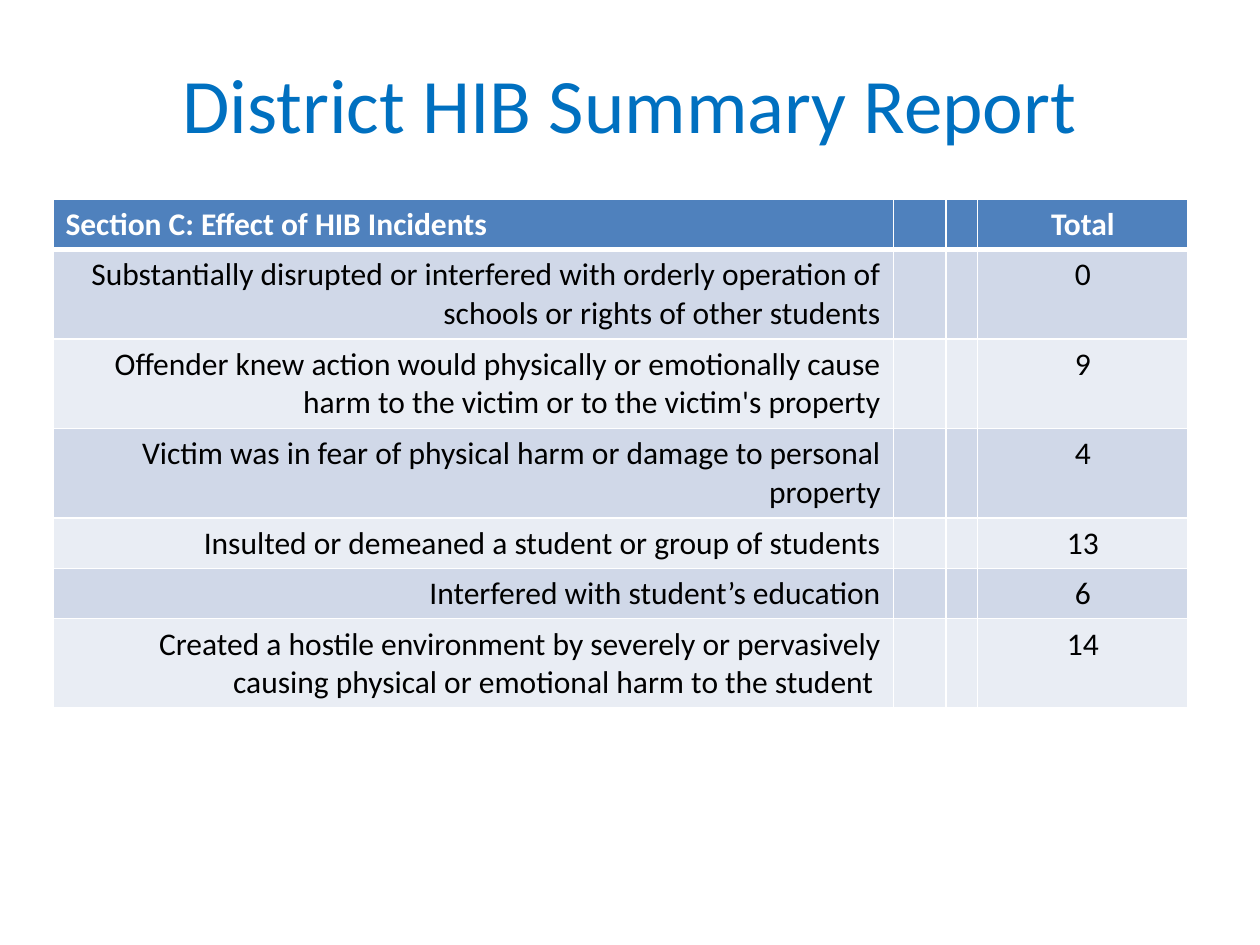
"""Build the District HIB Summary Report slide."""
from lxml import etree
from pptx import Presentation
from pptx.dml.color import RGBColor
from pptx.enum.text import MSO_ANCHOR, PP_ALIGN
from pptx.oxml.ns import qn
from pptx.util import Inches, Pt

LEFT, CENTER, RIGHT = PP_ALIGN.LEFT, PP_ALIGN.CENTER, PP_ALIGN.RIGHT
MIDDLE = MSO_ANCHOR.MIDDLE
HEADER_FILL, BAND_FILLS = "4F81BD", ("E9EDF4", "D0D8E8")


def write(frame, text, size, color, align, bold=False):
    frame.text = text
    paragraph = frame.paragraphs[0]
    paragraph.alignment = align
    for run in paragraph.runs:
        run.font.name = "Calibri"
        run.font.size = Pt(size)
        run.font.bold = bold
        run.font.color.rgb = RGBColor.from_string(color)


def set_borders(cell, color, widths):
    properties = cell._tc.get_or_add_tcPr()
    for position, (side, width) in enumerate(widths.items()):
        line = etree.Element(qn(f"a:ln{side}"), w=str(Pt(width)))
        fill = etree.SubElement(line, qn("a:solidFill"))
        etree.SubElement(fill, qn("a:srgbClr"), val=color)
        properties.insert(position, line)


prs = Presentation()
prs.slide_width, prs.slide_height = Inches(10), Inches(7.5)
slide = prs.slides.add_slide(prs.slide_layouts[6])

title = slide.shapes.add_textbox(Inches(0.5), Inches(0.3), Inches(9), Inches(1.03)).text_frame
title.word_wrap = True
title.vertical_anchor = MIDDLE
write(title, "District HIB Summary Report", 44, "0070C0", CENTER)

effects = [
    ("Section C: Effect of HIB Incidents", "Total", 0.4),
    ("Substantially disrupted or interfered with orderly operation of schools or rights of other students", "0", 0.71),
    ("Offender knew action would physically or emotionally cause harm to the victim or to the victim's property", "9", 0.71),
    ("Victim was in fear of physical harm or damage to personal property", "4", 0.71),
    ("Insulted or demeaned a student or group of students", "13", 0.4),
    ("Interfered with student’s education", "6", 0.4),
    ("Created a hostile environment by severely or pervasively causing physical or emotional harm to the student ", "14", 0.71),
]
column_widths = [6.67, 0.42, 0.25, 1.67]
table = slide.shapes.add_table(
    len(effects), len(column_widths), Inches(0.42), Inches(1.58),
    Inches(sum(column_widths)), Inches(sum(height for _, _, height in effects)),
).table
for column, width in zip(table.columns, column_widths):
    column.width = Inches(width)

for row, (effect, total, height) in enumerate(effects):
    table.rows[row].height = Inches(height)
    is_header = row == 0
    text_color = "FFFFFF" if is_header else "000000"
    row_fill = HEADER_FILL if is_header else BAND_FILLS[row % 2]
    widths = {"L": 1, "R": 1, "T": 3 if row == 1 else 1, "B": 3 if is_header else 1}
    for column, text in enumerate((effect, "", "", total)):
        cell = table.cell(row, column)
        cell.fill.solid()
        cell.fill.fore_color.rgb = RGBColor.from_string(row_fill)
        set_borders(cell, "FFFFFF", widths)
        effect_align = LEFT if is_header else RIGHT
        write(cell.text_frame, text, 18, text_color, CENTER if column else effect_align, is_header)

prs.save("out.pptx")
